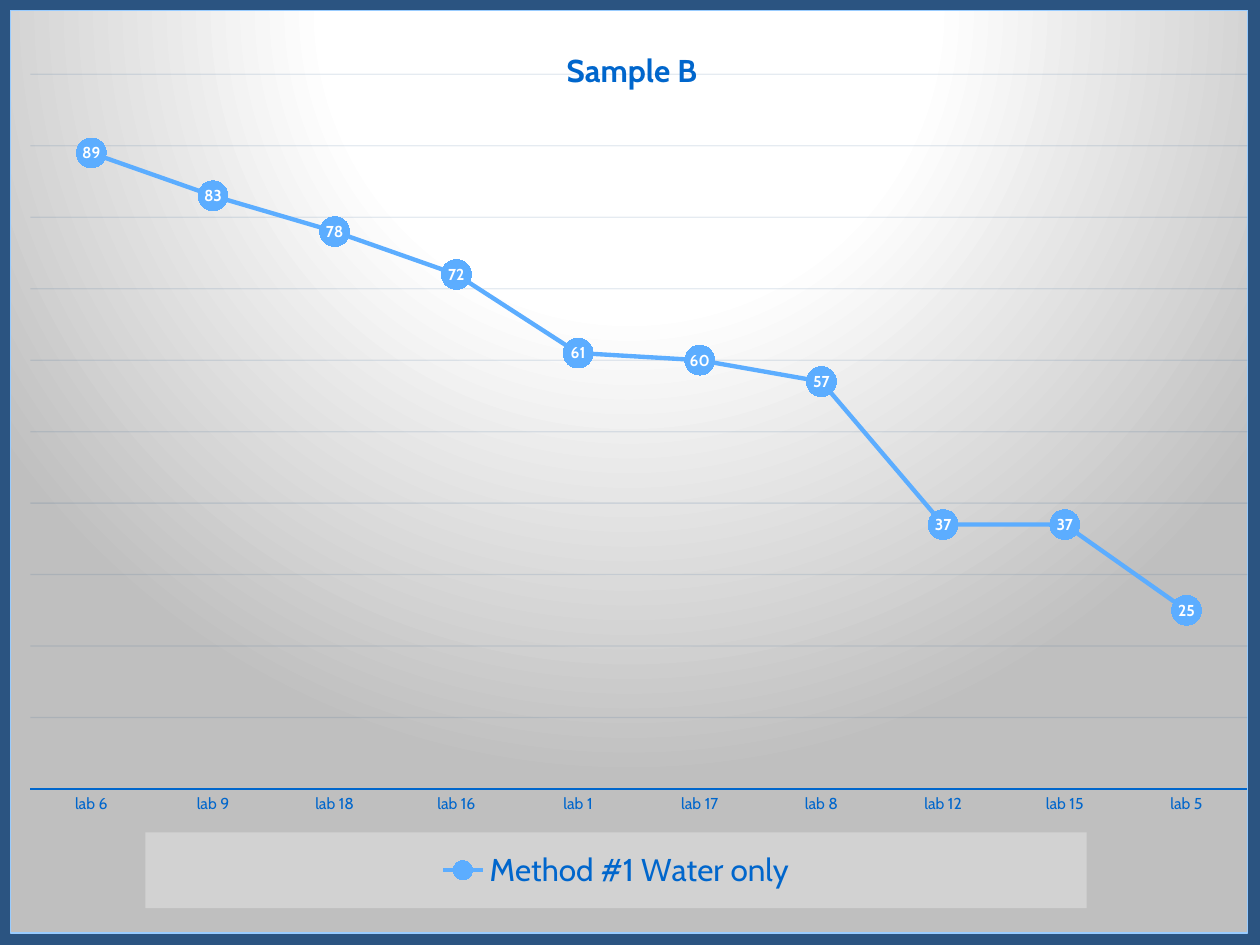
from dataclasses import dataclass

from pptx import Presentation, oxml
from pptx import util as u
from pptx.chart import data as cd
from pptx.dml import color as co
from pptx.enum import chart as ch
from pptx.oxml import ns


@dataclass
class Theme:
    face: str = "Cabin"
    back: str = "2B5481"
    text: str = "0066CC"
    line: str = "5CADFF"
    grid: str = "003D7A"
    edge: str = "99CCFF"
    pale: str = "F2F2F2"
    white: str = "FFFFFF"
    grey: str = "BFBFBF"
    small: int = 9
    base: int = 10
    large: int = 18


def rgb(code):
    return co.RGBColor.from_string(code)


def node(tag, body):
    return oxml.parse_xml(f'<{tag} {ns.nsdecls("c", "a")}>{body}</{tag}>')


def place(mark, inner=False, **box):
    """Give the parent of mark a manual layout, set just before mark."""
    for old in mark.getparent().findall(ns.qn("c:layout")):
        mark.getparent().remove(old)
    body = '<c:layoutTarget val="inner"/>' if inner else ""
    body += '<c:xMode val="edge"/><c:yMode val="edge"/>'
    body += "".join(f'<c:{key} val="{val}"/>' for key, val in box.items())
    mark.addprevious(node("c:layout", f"<c:manualLayout>{body}</c:manualLayout>"))


class Deck:
    def __init__(self, theme):
        self.theme = theme
        self.prs = Presentation()
        self.prs.slide_width, self.prs.slide_height = u.Inches(10), u.Inches(7.5)
        self.slide = self.prs.slides.add_slide(self.prs.slide_layouts[6])
        fill = self.slide.background.fill
        fill.solid()
        fill.fore_color.rgb = rgb(theme.back)

    def font(self, font, size, code, bold=False):
        font.name, font.size, font.bold = self.theme.face, u.Pt(size), bold
        font.color.rgb = rgb(code)

    def stroke(self, line, code, width):
        line.color.rgb = rgb(code)
        line.width = u.Pt(width)

    def chart(self, box, labs, name, vals):
        data = cd.CategoryChartData()
        data.categories = labs
        data.add_series(name, vals)
        frame = self.slide.shapes.add_chart(
            ch.XL_CHART_TYPE.LINE_MARKERS, *map(u.Inches, box), data)
        chart = frame.chart
        self.font(chart.font, self.theme.base, self.theme.white)
        self.panel(chart)
        self.axes(chart)
        self.series(chart.plots[0])
        return chart

    def panel(self, chart):
        t = self.theme
        stops = "".join(
            f'<a:gs pos="{pos * 1000}"><a:srgbClr val="{code}"/></a:gs>'
            for pos, code in ((0, t.white), (39, t.white), (100, t.grey)))
        body = (f'<a:gradFill><a:gsLst>{stops}</a:gsLst><a:path path="circle">'
                '<a:fillToRect l="50000" t="-80000" r="50000" b="180000"/>'
                '</a:path></a:gradFill><a:ln w="9525"><a:solidFill>'
                f'<a:srgbClr val="{t.edge}"/></a:solidFill></a:ln>')
        chart.element.find(ns.qn("c:txPr")).addprevious(node("c:spPr", body))
        place(chart.element.xpath(".//c:lineChart")[0], inner=True,
              x=0.016, y=0.069, w=0.984, h=0.775)

    def axes(self, chart):
        t = self.theme
        cat, val = chart.category_axis, chart.value_axis
        cat.major_tick_mark = cat.minor_tick_mark = ch.XL_TICK_MARK.NONE
        self.font(cat.tick_labels.font, t.small, t.text)
        self.stroke(cat.format.line, t.text, 1.5)
        val.visible = False
        val.minimum_scale, val.maximum_scale, val.major_unit = 0, 100, 10
        self.stroke(val.major_gridlines.format.line, t.grid, 0.75)
        tint = chart.element.xpath(".//c:majorGridlines//a:srgbClr")[0]
        tint.append(node("a:alpha", ""))
        tint[0].set("val", "10000")

    def series(self, plot):
        t = self.theme
        plot.vary_by_categories = False
        ser = plot.series[0]
        ser.smooth = False
        self.stroke(ser.format.line, t.line, 2.5)
        mark = ser.marker
        mark.style, mark.size = ch.XL_MARKER_STYLE.CIRCLE, 17
        mark.format.fill.solid()
        mark.format.fill.fore_color.rgb = rgb(t.line)
        mark.format.line.color.rgb = rgb(t.line)
        labels = ser.data_labels
        labels.show_value = True
        labels.position = ch.XL_LABEL_POSITION.CENTER
        self.font(labels.font, t.small, t.white, True)

    def title(self, chart, words):
        chart.has_title = True
        title = chart.chart_title
        title.include_in_layout = False
        title.text_frame.text = words
        para = title.text_frame.paragraphs[0]
        self.font(para.font, self.theme.large, self.theme.text, True)
        place(chart.element.xpath("c:chart/c:title/c:overlay")[0],
              x=0.445, y=0.035)

    def legend(self, chart):
        chart.has_legend = True
        key = chart.legend
        key.position = ch.XL_LEGEND_POSITION.BOTTOM
        key.include_in_layout = False
        self.font(key.font, self.theme.large, self.theme.text)
        mark = chart.element.xpath("c:chart/c:legend/c:overlay")[0]
        place(mark, x=0.109, y=0.891, w=0.761, h=0.082)
        mark.addnext(node("c:spPr", f'<a:solidFill><a:srgbClr val="{self.theme.pale}">'
                          '<a:alpha val="39000"/></a:srgbClr></a:solidFill>'))


def main():
    deck = Deck(Theme())
    labs = [f"lab {num}" for num in (6, 9, 18, 16, 1, 17, 8, 12, 15, 5)]
    chart = deck.chart((0.08, 0.08, 9.83, 7.33), labs, "Method #1 Water only",
                       (89, 83, 78, 72, 61, 60, 57, 37, 37, 25))
    deck.title(chart, "Sample B")
    deck.legend(chart)
    deck.prs.save("out.pptx")


if __name__ == "__main__":
    main()
